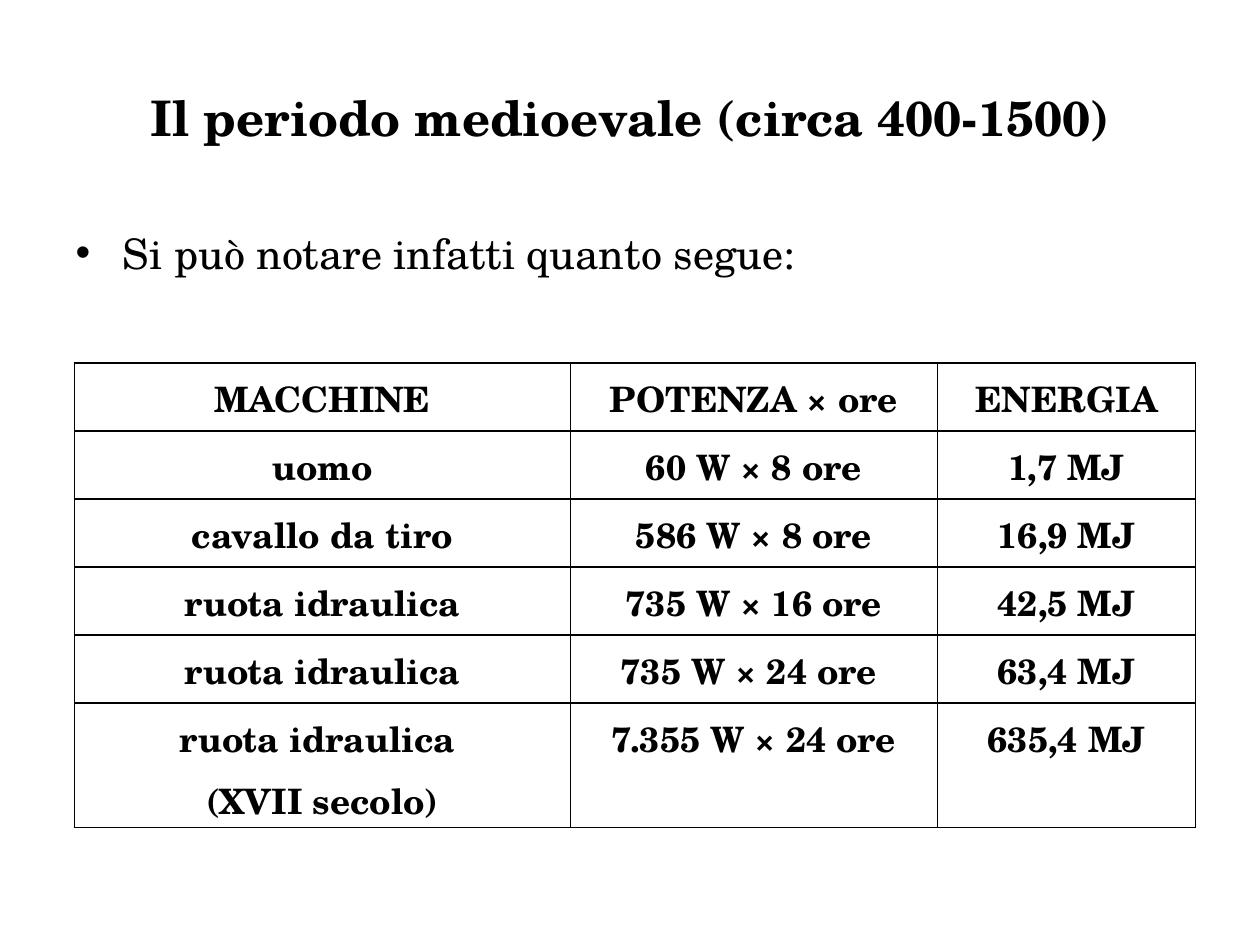
from dataclasses import dataclass

from lxml.etree import SubElement
from pptx import Presentation
from pptx.dml.color import RGBColor
from pptx.enum.text import MSO_ANCHOR, PP_ALIGN
from pptx.oxml.ns import qn
from pptx.util import Cm, Pt


@dataclass(frozen=True)
class Theme:
    font: str = "TeX Gyre Schola"
    ink: str = "000000"
    title_size: int = 28
    body_size: int = 24
    table_size: int = 20
    border_width: int = 1


theme = Theme()


def add_span(para, text, size, bold=False):
    span = para.add_run()
    span.text = text
    span.font.name = theme.font
    span.font.size = Pt(size)
    span.font.bold = bold
    span.font.color.rgb = RGBColor.from_string(theme.ink)


def add_borders(cell):
    properties = cell._tc.get_or_add_tcPr()
    for position, side in enumerate(("lnL", "lnR", "lnT", "lnB")):
        line = SubElement(properties, qn(f"a:{side}"), w=str(Pt(theme.border_width)))
        fill = SubElement(line, qn("a:solidFill"))
        SubElement(fill, qn("a:srgbClr"), val=theme.ink)
        properties.insert(position, line)


deck = Presentation()
deck.slide_width, deck.slide_height = Cm(25.4), Cm(19.05)
page = deck.slides.add_slide(deck.slide_layouts[1])

# Title
title = page.shapes.title
title.left, title.top, title.width, title.height = Cm(1.27), Cm(0.76), Cm(22.86), Cm(3.18)
title.text_frame.vertical_anchor = MSO_ANCHOR.MIDDLE
para = title.text_frame.paragraphs[0]
para.alignment = PP_ALIGN.CENTER
add_span(para, "Il periodo medioevale (circa 400-1500)", theme.title_size, bold=True)

# Introductory bullet, with the template's bullet and indent
body = page.placeholders[1]
body.left, body.top, body.width, body.height = Cm(1.27), Cm(4.45), Cm(23.42), Cm(2.08)
para = body.text_frame.paragraphs[0]
para.alignment = PP_ALIGN.JUSTIFY
para.space_before = Pt(0)
add_span(para, "Si può notare infatti quanto segue:", theme.body_size)

# Machines table
machines = [
    ("MACCHINE", "POTENZA × ore", "ENERGIA"),
    ("uomo", "60 W × 8 ore", "1,7 MJ"),
    ("cavallo da tiro", "586 W × 8 ore", "16,9 MJ"),
    ("ruota idraulica", "735 W × 16 ore", "42,5 MJ"),
    ("ruota idraulica", "735 W × 24 ore ", "63,4 MJ"),
    ("ruota idraulica \n(XVII secolo)", "7.355 W × 24 ore", "635,4 MJ"),
]
column_widths = [Cm(10), Cm(7.4), Cm(5.2)]
row_height = Cm(1.37)

table = page.shapes.add_table(
    len(machines), len(column_widths),
    Cm(1.5), Cm(7.32), sum(column_widths), row_height * len(machines),
).table
table.first_row = table.horz_banding = False
for column, width in zip(table.columns, column_widths):
    column.width = width

for row, texts in zip(table.rows, machines):
    row.height = row_height
    for cell, text in zip(row.cells, texts):
        cell.margin_left = cell.margin_right = Cm(0.18)
        cell.margin_top = cell.margin_bottom = Cm(0)
        cell.fill.background()
        add_borders(cell)
        for index, line_text in enumerate(text.split("\n")):
            frame = cell.text_frame
            para = frame.add_paragraph() if index else frame.paragraphs[0]
            para.alignment = PP_ALIGN.CENTER
            para.line_spacing = 1.15
            add_span(para, line_text, theme.table_size, bold=True)

deck.save("out.pptx")
